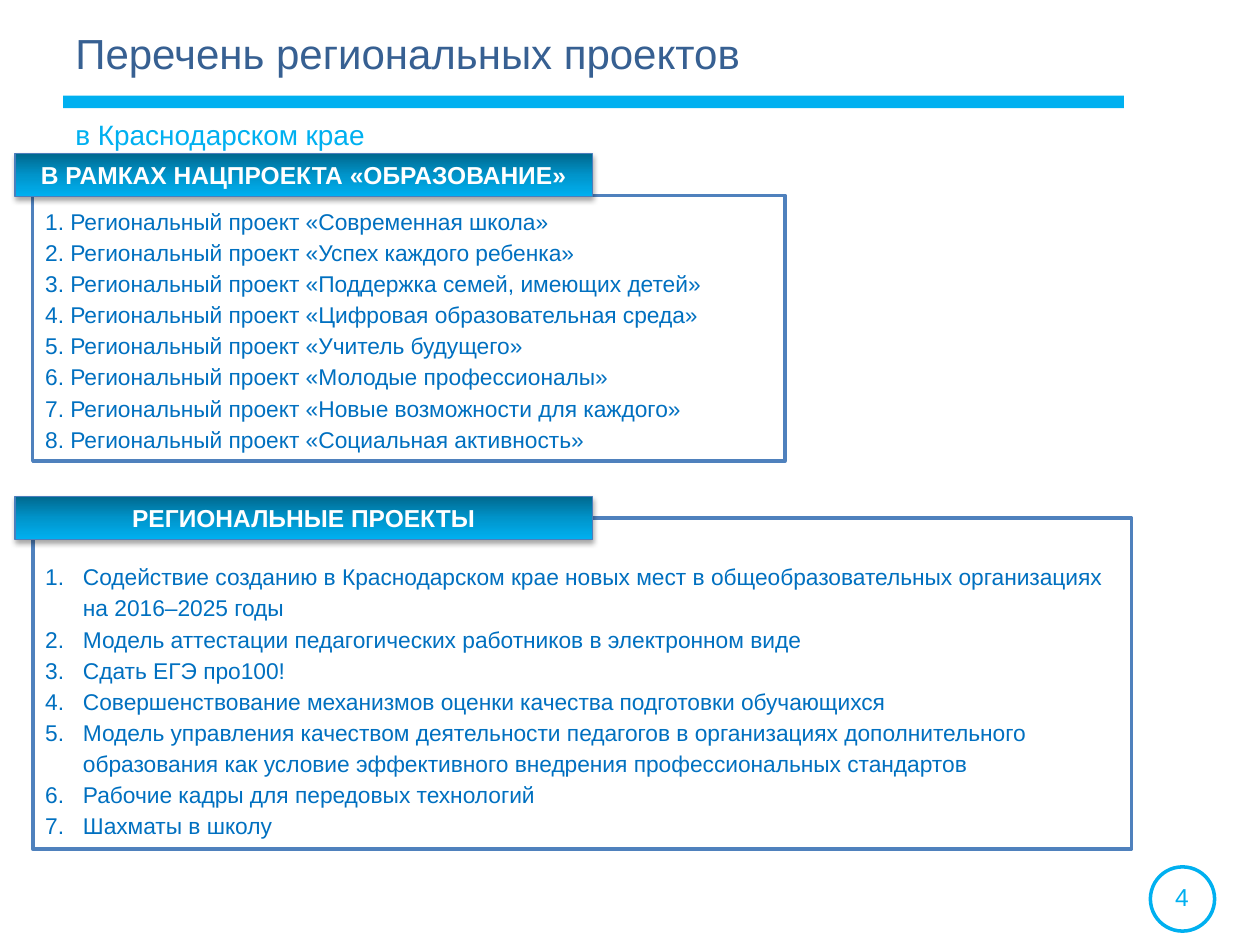
"""Build the slide listing regional education projects."""
from lxml.etree import SubElement
from pptx import Presentation
from pptx.dml.color import RGBColor
from pptx.enum.shapes import MSO_SHAPE
from pptx.enum.text import MSO_ANCHOR, PP_ALIGN
from pptx.oxml.ns import qn
from pptx.util import Inches, Pt

CYAN = RGBColor(0x00, 0xB0, 0xF0)
NAVY = RGBColor(0x37, 0x60, 0x92)
BLUE = RGBColor(0x00, 0x70, 0xC0)
FRAME_BLUE = RGBColor(0x4F, 0x81, 0xBD)
HEADER_LINE = RGBColor(0x4B, 0x7E, 0xBC)
WHITE = RGBColor(0xFF, 0xFF, 0xFF)
HEADER_STOPS = [(0, "00688E"), (50, "0094CA"), (100, "00B0F0")]

TITLE = "Перечень региональных проектов"
SUBTITLE = "в Краснодарском крае"
PAGE_NUMBER = "4"
SECTIONS = [
    {
        "header": "В РАМКАХ НАЦПРОЕКТА «ОБРАЗОВАНИЕ»",
        "header_top": 1.22,
        "frame": (0.26, 1.55, 5.97, 2.11),
        "indent": 0.2,
        "top_margin": 0.05,
        "items": [
            f"Региональный проект «{name}»"
            for name in (
                "Современная школа",
                "Успех каждого ребенка",
                "Поддержка семей, имеющих детей",
                "Цифровая образовательная среда",
                "Учитель будущего",
                "Молодые профессионалы",
                "Новые возможности для каждого",
                "Социальная активность",
            )
        ],
    },
    {
        "header": "РЕГИОНАЛЬНЫЕ ПРОЕКТЫ",
        "header_top": 3.94,
        "frame": (0.26, 4.11, 8.72, 2.63),
        "indent": 0.3,
        "top_margin": 0.3,
        "items": [
            "Содействие созданию в Краснодарском крае новых мест в общеобразовательных организациях на 2016–2025 годы",
            "Модель аттестации педагогических работников в электронном виде",
            "Сдать ЕГЭ про100!",
            "Совершенствование механизмов оценки качества подготовки обучающихся",
            "Модель управления качеством деятельности педагогов в организациях дополнительного образования "
            "как условие эффективного внедрения профессиональных стандартов",
            "Рабочие кадры для передовых технологий",
            "Шахматы в школу",
        ],
    },
]


def style(para, size, color, bold=False, align=PP_ALIGN.LEFT):
    para.alignment = align
    para.font.name = "Arial"
    para.font.size = Pt(size)
    para.font.color.rgb = color
    para.font.bold = bold


def add_text(page, area, text, size, color, anchor=MSO_ANCHOR.TOP, align=PP_ALIGN.LEFT):
    box = page.shapes.add_textbox(*map(Inches, area))
    box.text_frame.word_wrap = True
    box.text_frame.vertical_anchor = anchor
    para = box.text_frame.paragraphs[0]
    para.text = text
    style(para, size, color, align=align)


def add_panel(page, kind, area, fill=None, line=None, width=2):
    panel = page.shapes.add_shape(kind, *map(Inches, area))
    panel.shadow.inherit = False
    if fill is None:
        panel.fill.background()
    else:
        panel.fill.solid()
        panel.fill.fore_color.rgb = fill
    if line is None:
        panel.line.fill.background()
    else:
        panel.line.color.rgb = line
        panel.line.width = Pt(width)
    return panel


def number_paragraph(para, indent):
    properties = para._p.get_or_add_pPr()
    properties.set("marL", str(Inches(indent)))
    properties.set("indent", str(-Inches(indent)))
    SubElement(properties, qn("a:buFont"), typeface="+mj-lt")
    SubElement(properties, qn("a:buAutoNum"), type="arabicPeriod")


def add_list(page, section):
    frame = add_panel(page, MSO_SHAPE.RECTANGLE, section["frame"], WHITE, FRAME_BLUE)
    text_frame = frame.text_frame
    text_frame.word_wrap = True
    text_frame.vertical_anchor = MSO_ANCHOR.MIDDLE
    text_frame.margin_top = Inches(section["top_margin"])
    for index, item in enumerate(section["items"]):
        para = text_frame.add_paragraph() if index else text_frame.paragraphs[0]
        para.text = item
        number_paragraph(para, section["indent"])
        para.line_spacing = 1.14
        style(para, 13, BLUE)


def add_gradient(shape):
    shape.fill.gradient()
    shape.fill.gradient_angle = 270
    stops = shape._element.spPr.find(qn("a:gradFill")).find(qn("a:gsLst"))
    for stop in list(stops):
        stops.remove(stop)
    for position, color in HEADER_STOPS:
        stop = SubElement(stops, qn("a:gs"), pos=str(position * 1000))
        SubElement(stop, qn("a:srgbClr"), val=color)


def add_shadow(shape):
    effects = shape._element.spPr.find(qn("a:effectLst"))
    shadow = SubElement(
        effects, qn("a:outerShdw"), blurRad=str(Pt(3.1)), dist=str(Pt(1.8)), dir="5400000", rotWithShape="0"
    )
    color = SubElement(shadow, qn("a:srgbClr"), val="000000")
    SubElement(color, qn("a:alpha"), val="35000")


def add_header(page, section):
    area = (0.12, section["header_top"], 4.58, 0.34)
    header = add_panel(page, MSO_SHAPE.RECTANGLE, area, WHITE, HEADER_LINE, 0.75)
    add_gradient(header)
    add_shadow(header)
    header.text_frame.word_wrap = True
    para = header.text_frame.paragraphs[0]
    para.text = section["header"]
    style(para, 14, WHITE, bold=True, align=PP_ALIGN.CENTER)


def main():
    deck = Presentation()
    deck.slide_width, deck.slide_height = Inches(10), Inches(7.5)
    page = deck.slides.add_slide(deck.slide_layouts[6])
    add_panel(page, MSO_SHAPE.RECTANGLE, (0.5, 0.76, 8.42, 0.1), fill=CYAN)
    add_panel(page, MSO_SHAPE.OVAL, (9.13, 6.88, 0.51, 0.51), line=CYAN)
    add_text(page, (9.09, 6.95, 0.58, 0.34), PAGE_NUMBER, 14, CYAN, align=PP_ALIGN.CENTER)
    add_text(page, (0.5, 0.88, 8.56, 0.78), SUBTITLE, 16, CYAN)
    add_text(page, (0.5, 0.13, 8.56, 0.57), TITLE, 24, NAVY, MSO_ANCHOR.MIDDLE)
    for section in SECTIONS:
        add_list(page, section)
        add_header(page, section)
    deck.save("out.pptx")


if __name__ == "__main__":
    main()
